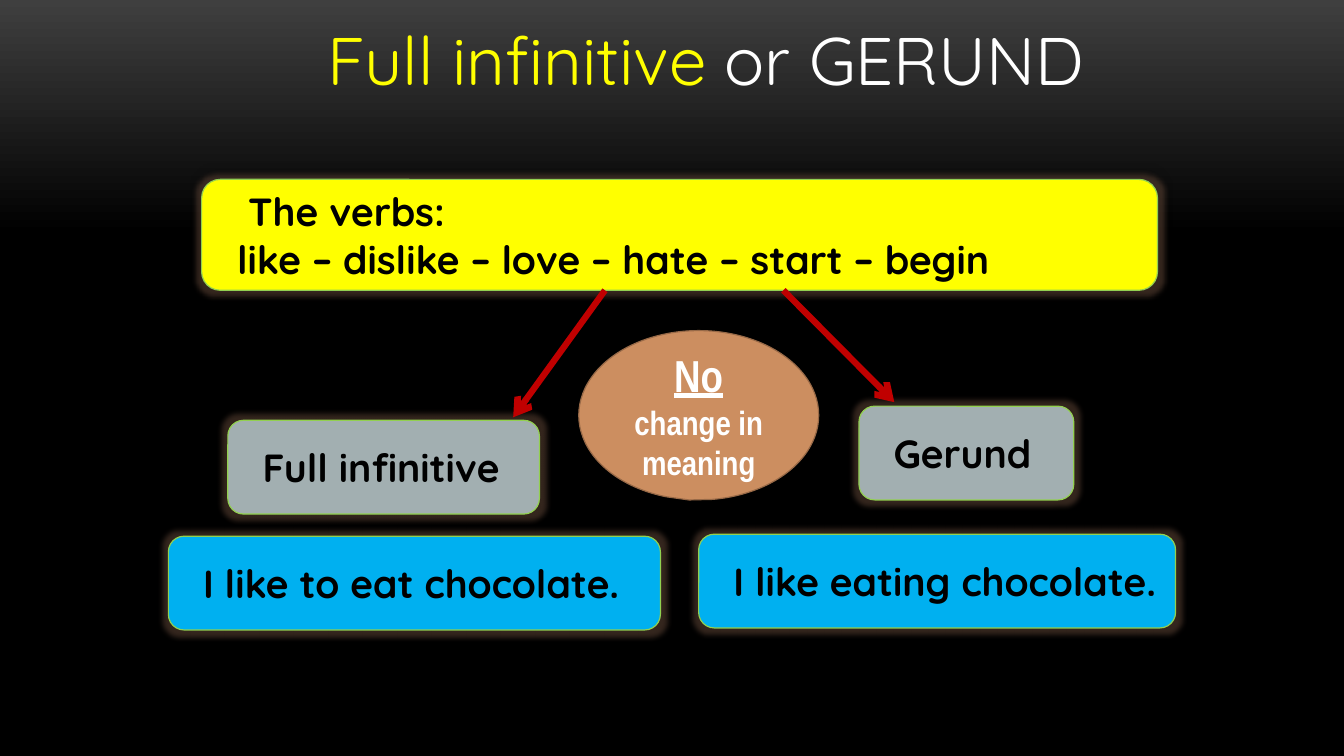
from lxml.etree import SubElement
from pptx import Presentation
from pptx.dml.color import RGBColor
from pptx.enum.shapes import MSO_CONNECTOR, MSO_SHAPE
from pptx.enum.text import MSO_ANCHOR, PP_ALIGN
from pptx.oxml import parse_xml
from pptx.oxml.ns import nsdecls, qn
from pptx.util import Inches, Pt


def color(value):
    return RGBColor.from_string(value)


def add_text(paragraph, text, size=28, font="Quicksand", fill="000000", bold=False, underline=False):
    run = paragraph.add_run()
    run.text = text
    run.font.size = Pt(size)
    run.font.name = font
    run.font.color.rgb = color(fill)
    run.font.bold = bold
    run.font.underline = underline


presentation = Presentation()
presentation.slide_width = Inches(13.33)
presentation.slide_height = Inches(7.5)
slide = presentation.slides.add_slide(presentation.slide_layouts[6])

# Background: dark grey fading to black
background = slide.background.fill
background.gradient()
background.gradient_angle = 270
for stop, (position, value) in zip(background.gradient_stops, [(0, "3F3F3F"), (0.31, "000000")]):
    stop.position = position
    stop.color.rgb = color(value)

# Title
title = slide.shapes.add_textbox(Inches(2.9), Inches(0.13), Inches(8.2), Inches(1.25))
title.text_frame.word_wrap = True
paragraph = title.text_frame.paragraphs[0]
paragraph.alignment = PP_ALIGN.CENTER
add_text(paragraph, "Full infinitive ", size=48, fill="FFFF00")
add_text(paragraph, "or GERUND", size=48, fill="FFFFFF")

# Glowing boxes: position, fill, lines of text with their left indents
boxes = [
    (2.26, 4.17, 3.09, 0.93, "A2AFB1", [("Full infinitive", 0.2)]),
    (2, 1.78, 9.48, 1.1, "FFFF00",
     [("The verbs:", 0.31), ("like – dislike – love – hate – start – begin", 0.2)]),
    (8.52, 4.03, 2.13, 0.93, "A2AFB1", [("Gerund", 0.2)]),
    (1.67, 5.32, 4.88, 0.93, "00B0F0", [("I like to eat chocolate.", 0.2)]),
    (6.93, 5.3, 4.73, 0.93, "00B0F0", [("I like eating chocolate.", 0.2)]),
]
for left, top, width, height, fill, lines in boxes:
    box = slide.shapes.add_shape(
        MSO_SHAPE.ROUNDED_RECTANGLE, Inches(left), Inches(top), Inches(width), Inches(height))
    box.fill.solid()
    box.fill.fore_color.rgb = color(fill)
    box.line.color.rgb = color("92D050")
    box.line.width = Pt(0.85)
    box._element.spPr.append(parse_xml(
        f'<a:effectLst {nsdecls("a")}>'
        f'<a:glow rad="{Inches(0.11)}"><a:srgbClr val="835F4A"><a:alpha val="40000"/></a:srgbClr></a:glow>'
        f'<a:outerShdw blurRad="{Pt(4)}" dist="{Pt(3)}" dir="16200000" rotWithShape="0">'
        '<a:srgbClr val="000000"><a:alpha val="40000"/></a:srgbClr></a:outerShdw></a:effectLst>'))
    frame = box.text_frame
    frame.word_wrap = True
    frame.vertical_anchor = MSO_ANCHOR.MIDDLE
    for index, (text, indent) in enumerate(lines):
        paragraph = frame.add_paragraph() if index else frame.paragraphs[0]
        paragraph.alignment = PP_ALIGN.LEFT
        paragraph._p.get_or_add_pPr().set("marL", str(Inches(indent)))
        add_text(paragraph, text, bold=True)

# Arrows from the verbs to both forms
for start_x, start_y, end_x, end_y in [(6, 2.88, 5.09, 4.14), (7.77, 2.88, 8.87, 3.99)]:
    arrow = slide.shapes.add_connector(
        MSO_CONNECTOR.STRAIGHT, Inches(start_x), Inches(start_y), Inches(end_x), Inches(end_y))
    arrow.line.color.rgb = color("C00000")
    arrow.line.width = Pt(4.5)
    SubElement(arrow.line._get_or_add_ln(), qn("a:tailEnd"), type="arrow")
    SubElement(arrow._element.spPr, qn("a:effectLst"))

# Central callout
callout = slide.shapes.add_shape(
    MSO_SHAPE.OVAL_CALLOUT, Inches(5.74), Inches(3.28), Inches(2.38), Inches(1.68))
callout.adjustments[0] = -0.04
callout.adjustments[1] = 0.5
callout.shadow.inherit = False
callout.fill.solid()
callout.fill.fore_color.rgb = color("CC8E60")
callout.line.color.rgb = color("976947")
callout.line.width = Pt(0.85)
callout.text_frame.word_wrap = True
callout.text_frame.vertical_anchor = MSO_ANCHOR.MIDDLE
paragraph = callout.text_frame.paragraphs[0]
paragraph.alignment = PP_ALIGN.CENTER
add_text(paragraph, "No", size=32, font="Arial Narrow", fill="FFFFFF", bold=True, underline=True)
add_text(paragraph, " change in meaning", size=24, font="Arial Narrow", fill="FFFFFF", bold=True)

presentation.save("out.pptx")
